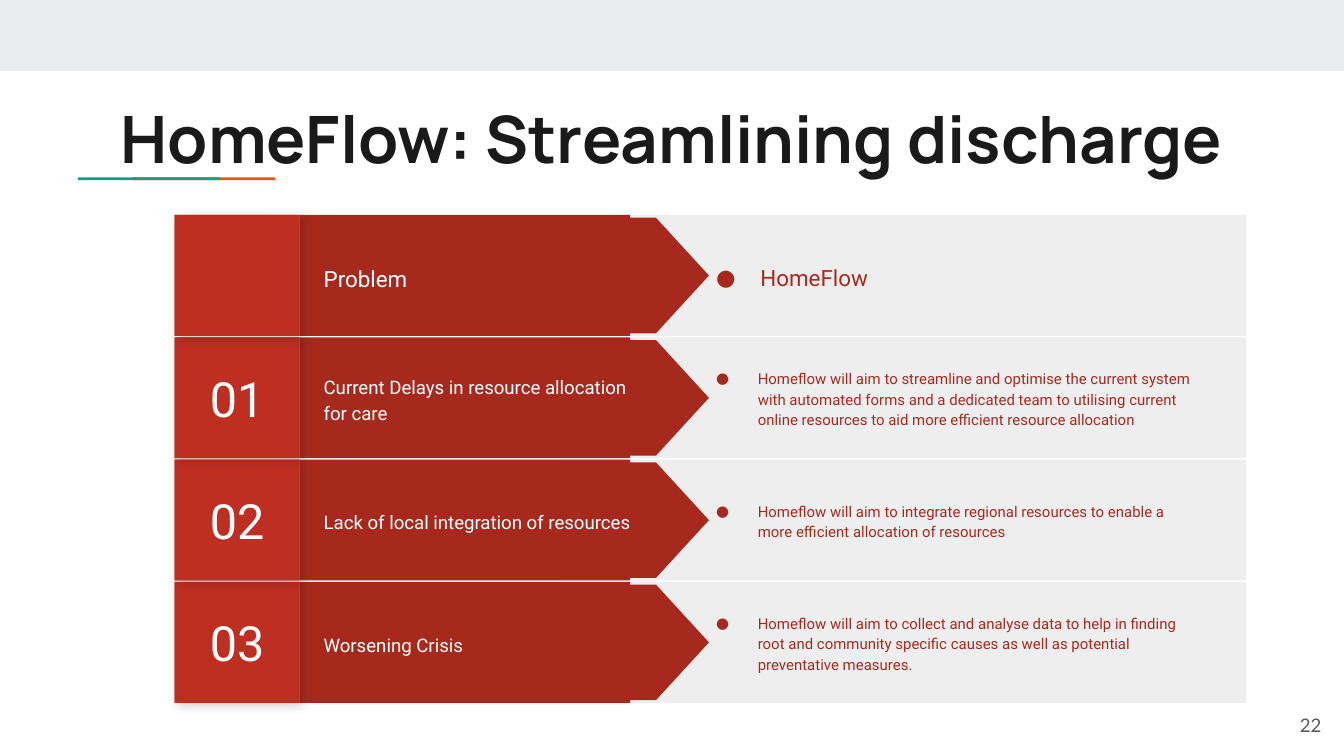
import pptx
import pptx.util
import pptx.dml.color
import pptx.enum.shapes
import pptx.enum.text
import pptx.oxml
import pptx.oxml.ns

Inches = pptx.util.Inches
Pt = pptx.util.Pt
MSO_SHAPE = pptx.enum.shapes.MSO_SHAPE
ALIGN = pptx.enum.text.PP_ALIGN
ANCHOR = pptx.enum.text.MSO_ANCHOR

COLORS = {
    "band": "E9EDEE",
    "orange": "EB5600",
    "teal": "1A9988",
    "panel": "EEEEEE",
    "dark_red": "A7291E",
    "shade_red": "B02B20",
    "red": "BE2F22",
    "white": "FFFFFF",
    "ink": "1A1A1A",
    "gray": "595959",
}

ROWS = [
    ("", "Problem", "HomeFlow"),
    ("01", "Current Delays in resource allocation for care",
     "Homeflow will aim to streamline and optimise the current system with "
     "automated forms and a dedicated team to utilising current online "
     "resources to aid more efficient resource allocation"),
    ("02", "Lack of local integration of resources",
     "Homeflow will aim to integrate regional resources to enable a more "
     "efficient allocation of resources"),
    ("03", "Worsening Crisis",
     "Homeflow will aim to collect and analyse data to help in finding root "
     "and community specific causes as well as potential preventative measures."),
]
ROW_TOP, ROW_STEP, ROW_HEIGHT = 1.6, 0.91, 0.9
ARROW_WIDTH, ARROW_LENGTH, ARROW_CENTER = 0.86, 1.97, 4.29


def rgb(name):
    return pptx.dml.color.RGBColor.from_string(COLORS[name])


def add_box(s, x, y, w, h, color, kind=MSO_SHAPE.RECTANGLE):
    sp = s.shapes.add_shape(kind, Inches(x), Inches(y), Inches(w), Inches(h))
    sp.shadow.inherit = False
    sp.fill.solid()
    sp.fill.fore_color.rgb = rgb(color)
    sp.line.fill.background()
    return sp


def add_shadow(sp):
    effects = sp._element.spPr.find(pptx.oxml.ns.qn("a:effectLst"))
    effects.append(pptx.oxml.parse_xml(
        f'<a:outerShdw {pptx.oxml.ns.nsdecls("a")} blurRad="{Pt(5.6)}" '
        f'dist="{Pt(2.2)}" dir="2700000" algn="bl" rotWithShape="0">'
        '<a:srgbClr val="000000"><a:alpha val="17000"/></a:srgbClr>'
        '</a:outerShdw>'))


def add_bullet(p, color, font, hanging):
    pPr = p._p.get_or_add_pPr()
    pPr.set("marL", str(Inches(0.5)))
    pPr.set("indent", str(-Inches(hanging)))
    ns = pptx.oxml.ns.nsdecls("a")
    for xml in (f'<a:buClr {ns}><a:srgbClr val="{COLORS[color]}"/></a:buClr>',
                f'<a:buFont {ns} typeface="{font}"/>',
                f'<a:buChar {ns} char="●"/>'):
        pPr.append(pptx.oxml.parse_xml(xml))


def write_text(sp, text, size, color, font="Roboto", bold=False,
               align=ALIGN.LEFT, anchor=ANCHOR.MIDDLE, spacing=None, hanging=None):
    tf = sp.text_frame
    tf.word_wrap = True
    tf.vertical_anchor = anchor
    tf.margin_left = tf.margin_right = Inches(0.1)
    tf.margin_top = tf.margin_bottom = Inches(0.1)
    p = tf.paragraphs[0]
    p.alignment = align
    if spacing:
        p.line_spacing = spacing
    if hanging:
        add_bullet(p, color, font, hanging)
    r = p.add_run()
    r.text = text
    r.font.size = Pt(size)
    r.font.name = font
    r.font.bold = bold
    r.font.color.rgb = rgb(color)


def add_label(s, x, y, w, h, text, size, color, **fmt):
    sp = s.shapes.add_textbox(Inches(x), Inches(y), Inches(w), Inches(h))
    write_text(sp, text, size, color, **fmt)


def add_arrow(s, y):
    sp = add_box(s, ARROW_CENTER - ARROW_WIDTH / 2,
                 y + (ROW_HEIGHT - ARROW_LENGTH) / 2,
                 ARROW_WIDTH, ARROW_LENGTH, "dark_red",
                 MSO_SHAPE.FLOWCHART_OFFPAGE_CONNECTOR)
    sp.rotation = 270


def add_row(s, y, number, problem, answer):
    is_header = not number
    add_box(s, 4.16, y, 5.11, ROW_HEIGHT, "panel")
    add_box(s, 2.23, y, 2.46, ROW_HEIGHT, "dark_red")
    add_arrow(s, y)
    add_label(s, 2.31, y + 0.11, 2.59, 0.69, problem,
              12 if is_header else 10, "white", spacing=1.15)
    add_shadow(add_box(s, 1.3, y, 0.93, ROW_HEIGHT, "shade_red"))
    tile = add_box(s, 1.3, y, 0.93, ROW_HEIGHT, "red")
    if number:
        write_text(tile, number, 26, "white", align=ALIGN.CENTER)
    add_label(s, 5.06 if is_header else 5.04, y, 3.97, ROW_HEIGHT, answer,
              12 if is_header else 8, "dark_red", spacing=1.15,
              hanging=0.33 if is_header else 0.31)


def main():
    prs = pptx.Presentation()
    prs.slide_width = Inches(10)
    prs.slide_height = prs.slide_width * 9 // 16
    s = prs.slides.add_slide(prs.slide_layouts[6])

    add_box(s, 0, 0, 10, 0.53, "band")
    add_box(s, 0.99, 1.32, 1.06, 0.02, "orange")
    add_box(s, 0.58, 1.32, 1.06, 0.02, "teal")
    for i, row in reversed(list(enumerate(ROWS))):
        add_row(s, ROW_TOP + i * ROW_STEP, *row)
    add_label(s, 9.3, 5.17, 0.63, 0.45, "22", 10, "gray",
              font="Lato", align=ALIGN.RIGHT)
    add_label(s, 0.8, 0.63, 8.41, 0.59, "HomeFlow: Streamlining discharge",
              35, "ink", font="Manrope", bold=True, anchor=ANCHOR.TOP)

    prs.save("out.pptx")


if __name__ == "__main__":
    main()
